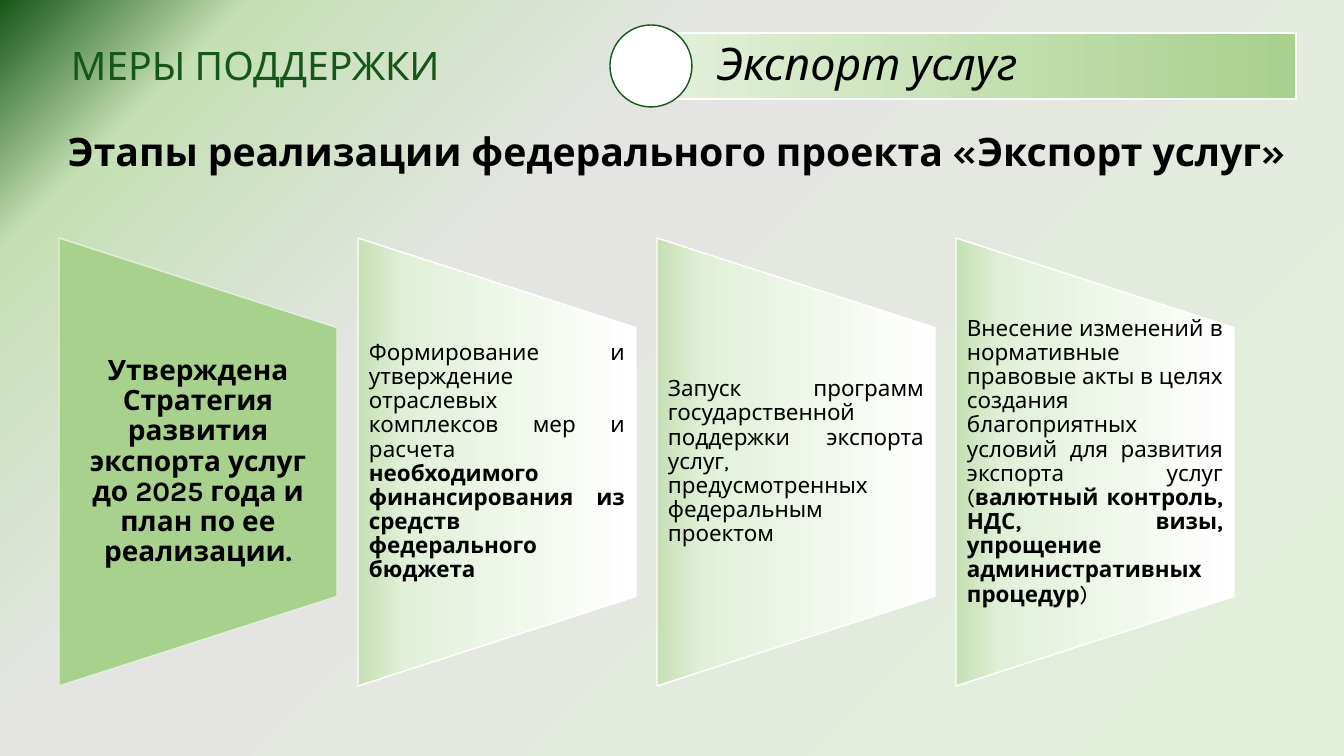
from lxml import etree
from pptx import Presentation
from pptx import util as u
from pptx.dml.color import RGBColor
from pptx.enum import shapes, text
from pptx.oxml import ns

PX = 12192000 / 1344  # EMU in one px
FONT = "Karla"

BLACK = RGBColor(0x00, 0x00, 0x00)
WHITE = RGBColor(0xFF, 0xFF, 0xFF)
FOREST = RGBColor(0x16, 0x56, 0x19)
LEAF = RGBColor(0xA9, 0xD1, 0x8E)
SAGE = RGBColor(0xC5, 0xE0, 0xB4)
MINT = RGBColor(0xE2, 0xF0, 0xD9)
MIST = RGBColor(0xE4, 0xE5, 0xE3)

BACKDROP = [(0, FOREST), (12, SAGE), (35, MIST), (100, MINT)]
BANNER = [(0, MINT), (98, LEAF)]
STAGE = [(0, SAGE), (17, MINT), (100, WHITE)]

# Each stage is a list of (words, bold) pieces
STAGES = [
    [("Утверждена Стратегия развития экспорта услуг до 2025 года и план по ее реализации.", True)],
    [("Формирование и утверждение отраслевых комплексов мер и расчета ", False),
     ("необходимого финансирования из средств федерального бюджета", True)],
    [("Запуск программ государственной поддержки экспорта услуг, "
      "предусмотренных федеральным проектом", False)],
    [("Внесение изменений в нормативные правовые акты в целях создания "
      "благоприятных условий для развития экспорта услуг (", False),
     ("валютный контроль, НДС, визы, упрощение административных процедур", True),
     (")", False)],
]
STAGE_LEFT, STAGE_PITCH, STAGE_MIDDLE = 59, 299, 462
STAGE_WIDTH, STAGE_HEIGHT, STAGE_TEXT_HEIGHT = 278, 448, 269


def px(*lengths):
    return [u.Emu(round(length * PX)) for length in lengths]


def set_gradient(fill, owner, stops, angle=0):
    """Fill with a linear gradient that keeps its direction when the shape turns."""
    fill.gradient()
    gradient = owner.find(".//" + ns.qn("a:gradFill"))
    gradient.set("rotWithShape", "0")
    for child in list(gradient):
        gradient.remove(child)
    stop_list = etree.SubElement(gradient, ns.qn("a:gsLst"))
    for percent, color in stops:
        stop = etree.SubElement(stop_list, ns.qn("a:gs"), pos=str(percent * 1000))
        etree.SubElement(stop, ns.qn("a:srgbClr"), val=str(color))
    etree.SubElement(gradient, ns.qn("a:lin"), ang=str(angle * 60000), scaled="0")


def add_figure(slide, preset, box, fill, line, rotation=0):
    """Add a preset shape; fill is one colour or a list of gradient stops."""
    figure = slide.shapes.add_shape(preset, *px(*box))
    figure.shadow.inherit = False
    figure.rotation = rotation
    if isinstance(fill, list):
        set_gradient(figure.fill, figure._element, fill)
    else:
        figure.fill.solid()
        figure.fill.fore_color.rgb = fill
    figure.line.color.rgb = line
    figure.line.width = u.Pt(1)


def add_label(slide, box, pieces, size, color=BLACK, insets=(0, 0, 0, 0), italic=False,
              align=text.PP_ALIGN.LEFT, anchor=text.MSO_ANCHOR.TOP, spacing=0.9):
    """Add one paragraph made of (words, bold) pieces."""
    frame = slide.shapes.add_textbox(*px(*box)).text_frame
    frame.word_wrap = True
    frame.vertical_anchor = anchor
    (frame.margin_left, frame.margin_top,
     frame.margin_right, frame.margin_bottom) = px(*insets)
    paragraph = frame.paragraphs[0]
    paragraph.alignment = align
    paragraph.line_spacing = spacing
    paragraph.font.name = FONT
    paragraph.font.size = u.Pt(size)
    paragraph.font.color.rgb = color
    paragraph.font.italic = italic
    for words, bold in pieces:
        run = paragraph.add_run()
        run.text = words
        run.font.bold = bold
    return paragraph


def add_stage(slide, index, pieces):
    left = STAGE_LEFT + index * STAGE_PITCH
    first = index == 0
    # The trapezoid is laid out upright, then turned about its centre
    turned_box = (left + (STAGE_WIDTH - STAGE_HEIGHT) / 2, STAGE_MIDDLE - STAGE_WIDTH / 2,
                  STAGE_HEIGHT, STAGE_WIDTH)
    add_figure(slide, shapes.MSO_SHAPE.FLOWCHART_MANUAL_OPERATION, turned_box,
               LEAF if first else STAGE, MINT if first else WHITE, rotation=270)
    inset = 14 if first else 11
    add_label(slide, (left, STAGE_MIDDLE - STAGE_TEXT_HEIGHT / 2, STAGE_WIDTH, STAGE_TEXT_HEIGHT),
              pieces, 20 if first else 16, insets=(inset, 0, inset, 0),
              align=text.PP_ALIGN.CENTER if first else text.PP_ALIGN.JUSTIFY,
              anchor=text.MSO_ANCHOR.MIDDLE)


def main():
    deck = Presentation()
    deck.slide_width, deck.slide_height = px(1344, 756)
    slide = deck.slides.add_slide(deck.slide_layouts[6])
    set_gradient(slide.background.fill, slide._element, BACKDROP, angle=45)

    # Topic banner with its round marker
    banner_box = (665, 33, 631, 66)
    add_figure(slide, shapes.MSO_SHAPE.RECTANGLE, banner_box, BANNER, WHITE)
    add_label(slide, banner_box, [("Экспорт услуг", False)], 32, insets=(52, 9, 9, 9),
              italic=True, anchor=text.MSO_ANCHOR.MIDDLE)
    add_figure(slide, shapes.MSO_SHAPE.OVAL, (610, 25, 82, 82), WHITE, FOREST)

    # Section name and slide title
    add_label(slide, (71, 41, 387, 61), [("МЕРЫ ПОДДЕРЖКИ", False)], 28, FOREST, spacing=1.0)
    title = add_label(slide, (58, 128, 1257, 80),
                      [("Этапы реализации федерального проекта «Экспорт услуг»", True)],
                      28, insets=(10, 5, 10, 5))
    title.space_before = u.Pt(10)

    # Project stages
    for index, pieces in enumerate(STAGES):
        add_stage(slide, index, pieces)

    deck.save("out.pptx")


if __name__ == "__main__":
    main()
